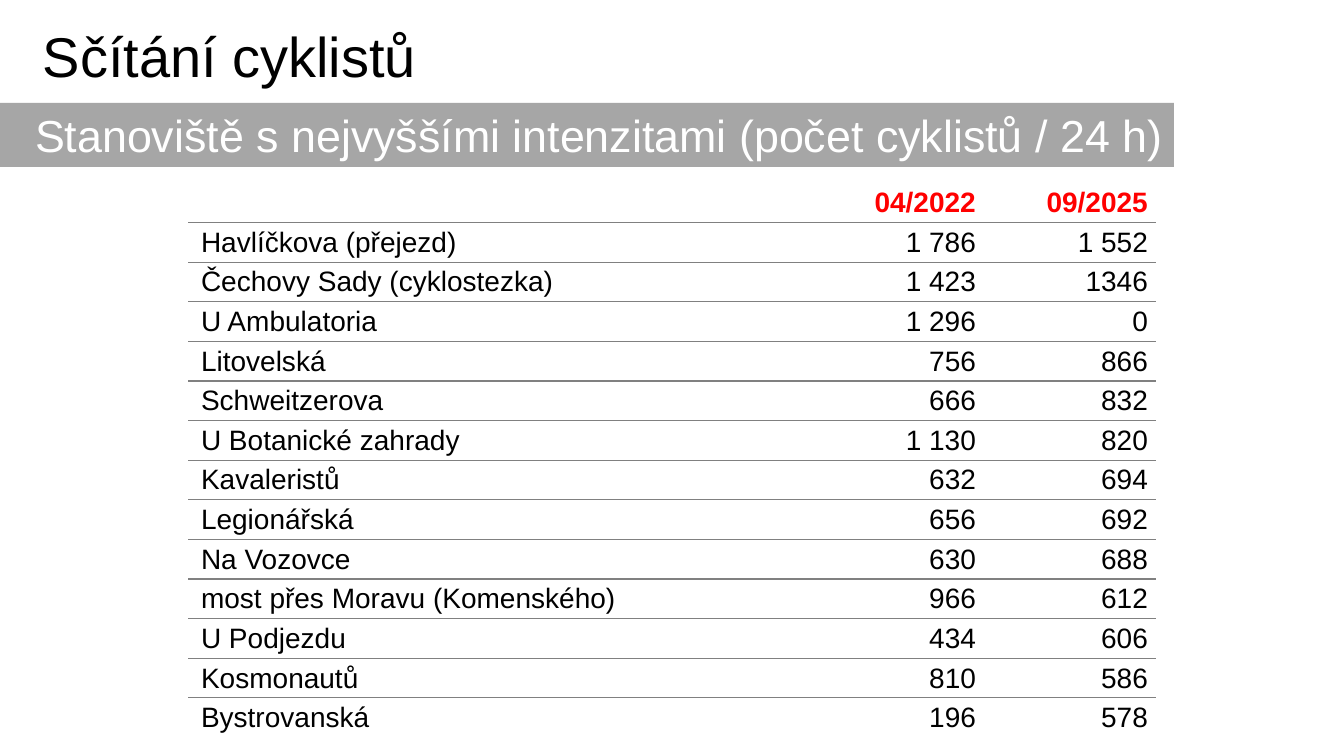
import pptx
import pptx.util
import pptx.dml.color
import pptx.enum.shapes
import pptx.enum.text
import pptx.oxml

EMU_PER_PX = 914400 / 100.8
BLACK = pptx.dml.color.RGBColor(0x00, 0x00, 0x00)
WHITE = pptx.dml.color.RGBColor(0xFF, 0xFF, 0xFF)
RED = pptx.dml.color.RGBColor(0xFF, 0x00, 0x00)
BAND_GRAY = pptx.dml.color.RGBColor(0xA6, 0xA6, 0xA6)
RULE_GRAY = pptx.dml.color.RGBColor(0x80, 0x80, 0x80)
DRAWING_NS = "http://schemas.openxmlformats.org/drawingml/2006/main"


def px(length):
    return pptx.util.Emu(round(length * EMU_PER_PX))


def style_font(paragraph, size, color, bold=False):
    paragraph.font.name = "Arial"
    paragraph.font.size = pptx.util.Pt(size)
    paragraph.font.color.rgb = color
    paragraph.font.bold = bold


COUNTS = [
    ("", "04/2022", "09/2025"),
    ("Havlíčkova (přejezd)", "1 786", "1 552"),
    ("Čechovy Sady (cyklostezka)", "1 423", "1346"),
    ("U Ambulatoria", "1 296", "0"),
    ("Litovelská", "756", "866"),
    ("Schweitzerova", "666", "832"),
    ("U Botanické zahrady", "1 130", "820"),
    ("Kavaleristů", "632", "694"),
    ("Legionářská", "656", "692"),
    ("Na Vozovce", "630", "688"),
    ("most přes Moravu (Komenského)", "966", "612"),
    ("U Podjezdu", "434", "606"),
    ("Kosmonautů", "810", "586"),
    ("Bystrovanská", "196", "578"),
]
COLUMN_WIDTHS = [604, 190, 172]
TABLE_HEIGHT = 555

presentation = pptx.Presentation()
presentation.slide_width = px(1344)
presentation.slide_height = px(756)
slide = presentation.slides.add_slide(presentation.slide_layouts[6])

counts_table = slide.shapes.add_table(
    len(COUNTS), len(COLUMN_WIDTHS), px(189), px(183), px(sum(COLUMN_WIDTHS)), px(TABLE_HEIGHT)
).table
counts_table.first_row = False
counts_table.horz_banding = False
for column, width in zip(counts_table.columns, COLUMN_WIDTHS):
    column.width = px(width)

last_row = len(COUNTS) - 1
for row_index, station in enumerate(COUNTS):
    counts_table.rows[row_index].height = px(TABLE_HEIGHT / len(COUNTS))
    for column_index, value in enumerate(station):
        is_header = row_index == 0
        is_name = column_index == 0
        cell = counts_table.cell(row_index, column_index)
        cell.margin_left = px(12 if is_name and not is_header else 6)
        cell.margin_right = px(7)
        cell.margin_top = px(0)
        cell.margin_bottom = px(4)
        cell.vertical_anchor = pptx.enum.text.MSO_ANCHOR.BOTTOM

        paragraph = cell.text_frame.paragraphs[0]
        paragraph.text = value
        paragraph.alignment = pptx.enum.text.PP_ALIGN.LEFT if is_name else pptx.enum.text.PP_ALIGN.RIGHT
        paragraph.line_spacing = pptx.util.Pt(14)
        paragraph.space_after = pptx.util.Pt(6)
        style_font(paragraph, 20, RED if is_header else BLACK, is_header)

        borders = [("lnL", WHITE), ("lnR", WHITE)]
        if not is_header:
            borders.append(("lnT", RULE_GRAY))
        if row_index < last_row:
            borders.append(("lnB", RULE_GRAY))
        for side, color in borders:
            cell._tc.get_or_add_tcPr().append(pptx.oxml.parse_xml(
                f'<a:{side} xmlns:a="{DRAWING_NS}" w="12700"><a:solidFill>'
                f'<a:srgbClr val="{color}"/></a:solidFill></a:{side}>'
            ))
        cell.fill.background()

title = slide.shapes.add_textbox(px(33), px(17), px(566), px(78))
title.text_frame.word_wrap = True
title.text_frame.text = "Sčítání cyklistů"
style_font(title.text_frame.paragraphs[0], 40, BLACK)

subtitle_band = slide.shapes.add_shape(
    pptx.enum.shapes.MSO_SHAPE.RECTANGLE, px(0), px(103), px(1174), px(64)
)
subtitle_band.shadow.inherit = False
subtitle_band.fill.solid()
subtitle_band.fill.fore_color.rgb = BAND_GRAY
subtitle_band.line.fill.background()
subtitle_band.text_frame.word_wrap = True
subtitle_band.text_frame.margin_left = px(35)
subtitle_band.text_frame.margin_right = px(0)
subtitle_band.text_frame.text = "Stanoviště s nejvyššími intenzitami (počet cyklistů / 24 h)"
subtitle = subtitle_band.text_frame.paragraphs[0]
subtitle.alignment = pptx.enum.text.PP_ALIGN.LEFT
style_font(subtitle, 32, WHITE)

presentation.save("out.pptx")
